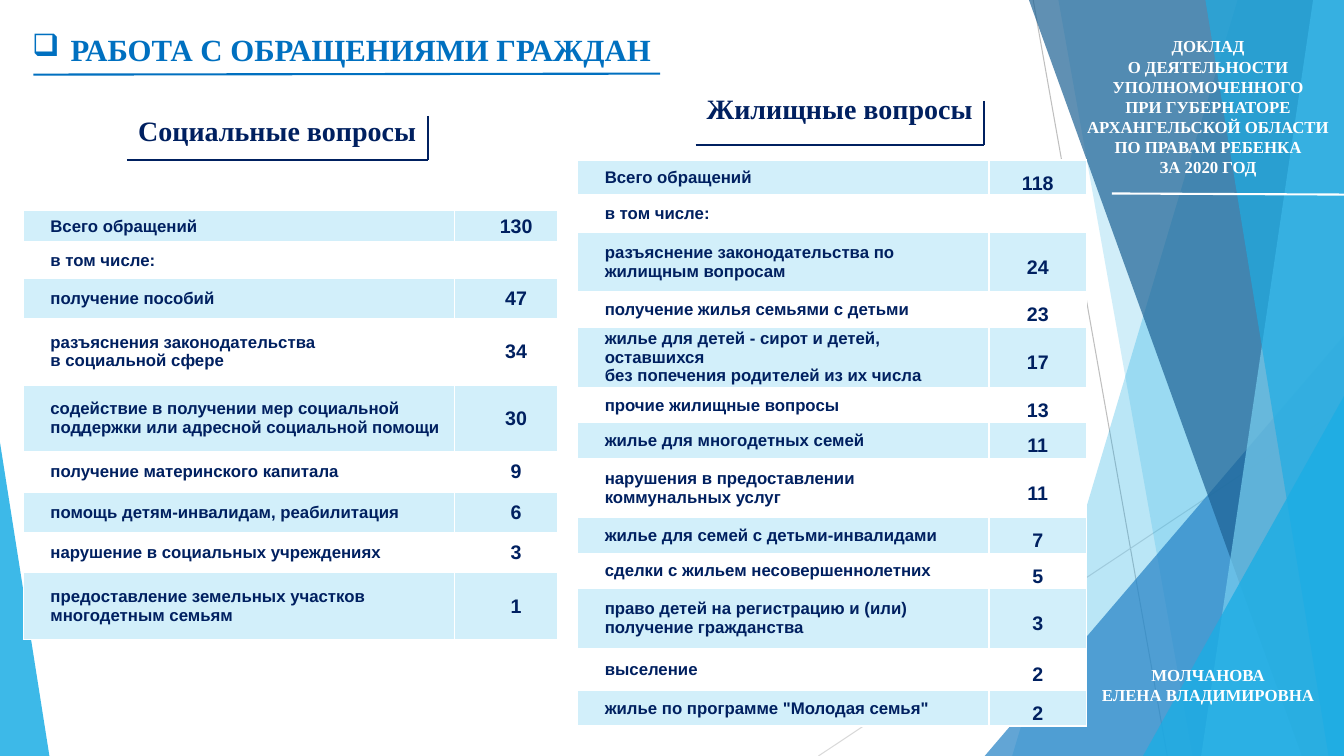
import pptx
import pptx.dml.color
import pptx.enum.shapes
import pptx.enum.text
import pptx.oxml
import pptx.oxml.ns
import pptx.util
from lxml import etree

Pt = pptx.util.Pt
ALIGN = pptx.enum.text.PP_ALIGN
ANCHOR = pptx.enum.text.MSO_ANCHOR

TITLE = "РАБОТА С ОБРАЩЕНИЯМИ ГРАЖДАН"
REPORT = ("ДОКЛАД\vО ДЕЯТЕЛЬНОСТИ УПОЛНОМОЧЕННОГО\vПРИ ГУБЕРНАТОРЕ "
          "АРХАНГЕЛЬСКОЙ ОБЛАСТИ\vПО ПРАВАМ РЕБЕНКА\vЗА 2020 ГОД")
AUTHOR = "МОЛЧАНОВА\vЕЛЕНА ВЛАДИМИРОВНА"

# Rows: label, number of appeals, row height
SOCIAL_ROWS = [
    ("Всего обращений", "130", 23.2),
    ("в том числе:", "", 25.2),
    ("получение пособий", "47", 28.7),
    ("разъяснения законодательства\vв социальной сфере", "34", 47.6),
    ("содействие в получении мер социальной поддержки или адресной социальной помощи", "30", 47.6),
    ("получение материнского капитала", "9", 28.9),
    ("помощь детям-инвалидам, реабилитация", "6", 28.9),
    ("нарушение в социальных учреждениях", "3", 28.9),
    ("предоставление земельных участков многодетным семьям", "1", 47.7),
]
HOUSING_ROWS = [
    ("Всего обращений", "118", 25.7),
    ("в том числе:", "", 25.7),
    ("разъяснение законодательства по жилищным вопросам", "24", 42.6),
    ("получение жилья семьями с детьми", "23", 25.3),
    ("жилье для детей - сирот и детей, оставшихся\vбез попечения родителей из их числа", "17", 43.2),
    ("прочие жилищные вопросы", "13", 25.3),
    ("жилье для многодетных семей", "11", 25.3),
    ("нарушения в предоставлении коммунальных услуг", "11", 42.6),
    ("жилье для семей с детьми-инвалидами", "7", 25.3),
    ("сделки с жильем несовершеннолетних", "5", 25.3),
    ("право детей на регистрацию и (или) получение гражданства", "3", 42.6),
    ("выселение", "2", 30.2),
    ('жилье по программе "Молодая семья"', "2", 25.3),
]
SECTIONS = [
    {"heading": "Социальные вопросы", "heading_box": (90.7, 77.8, 214.6, 31.7),
     "corner": (90.7, 306, 82.8, 114.5), "rows": SOCIAL_ROWS, "origin": (16.6, 150.3),
     "columns": (308.2, 73.4), "number_indent": 14.4, "number_spacing": 1},
    {"heading": "Жилищные вопросы", "heading_box": (496.8, 61.9, 205.9, 31.7),
     "corner": (496.8, 702.7, 72, 103.7), "rows": HOUSING_ROWS, "origin": (412.6, 114.3),
     "columns": (293.8, 69.8), "number_indent": 0, "number_spacing": 1.5},
]

WIDTH, HEIGHT = 960, 540
THEME = {
    "navy": "002060", "blue": "0070C0", "white": "FFFFFF", "band": "D2EFFA",
    "serif": "Times New Roman", "sans": "Arial",
    "title": 22, "heading": 20, "number": 14, "label": 12, "side": 12,
}
# Wedges: top x, bottom x. Triangles: left, top, width, height, apex.
BACKDROP = [
    ("wedge", (884.2, 722.9), "1CADE4", 30),
    ("wedge", (756, 851.8), "1CADE4", 20),
    ("triangle", (703.4, 239.8, 256.6, 300.2, 1), "2683C6", 72),
    ("wedge", (735.1, 929.5), "1D6294", 70),
    ("wedge", (938.2, 858.2), "77CEEF", 70),
    ("wedge", (861.1, 949), "1CADE4", 65),
    ("triangle", (816.5, 283, 143.5, 257, 1), "1CADE4", 80),
    ("triangle", (0, 316.1, 35.3, 223.9, 0), "1CADE4", 85),
]
HAIRLINES = [((738, 0, 833.8, 540), "BFBFBF"), ((960, 290.2, 584.6, 540), "D9D9D9")]


def rgb(value):
    return pptx.dml.color.RGBColor.from_string(value)


def add_line(slide, ends, color, width=1.5):
    line = slide.shapes.add_connector(pptx.enum.shapes.MSO_CONNECTOR.STRAIGHT, *map(Pt, ends))
    line.line.color.rgb = rgb(color)
    line.line.width = Pt(width)
    etree.SubElement(line._element.spPr, pptx.oxml.ns.qn("a:effectLst"))


def add_backdrop(slide):
    for ends, color in HAIRLINES:
        add_line(slide, ends, color, 0.75)
    for kind, geometry, color, opacity in BACKDROP:
        if kind == "wedge":
            top_x, bottom_x = geometry
            builder = slide.shapes.build_freeform(top_x, 0, scale=Pt(1))
            builder.add_line_segments([(WIDTH, 0), (WIDTH, HEIGHT), (bottom_x, HEIGHT)])
            shape = builder.convert_to_shape()
        else:
            *box, apex = geometry
            shape = slide.shapes.add_shape(
                pptx.enum.shapes.MSO_SHAPE.ISOSCELES_TRIANGLE, *map(Pt, box))
            shape.adjustments[0] = apex
        shape.shadow.inherit = False
        shape.line.fill.background()
        shape.fill.solid()
        shape.fill.fore_color.rgb = rgb(color)
        solid = shape._element.spPr.find(pptx.oxml.ns.qn("a:solidFill"))
        etree.SubElement(solid[0], pptx.oxml.ns.qn("a:alpha"), val=str(opacity * 1000))


def write(text_frame, text, face, size, color, align, spacing=1, indent=0):
    text_frame.text = text
    paragraph = text_frame.paragraphs[0]
    paragraph.alignment = align
    paragraph.line_spacing = spacing
    properties = paragraph._p.get_or_add_pPr()
    properties.set("marL", str(Pt(indent)))
    properties.set("indent", "0")
    font_format = {"name": THEME[face], "size": Pt(THEME[size]), "bold": True}
    for run in paragraph.runs:
        for name, value in font_format.items():
            setattr(run.font, name, value)
        run.font.color.rgb = rgb(THEME[color])
    return properties


def add_label(slide, box, text, size, color, wrap=True):
    shape = slide.shapes.add_textbox(*map(Pt, box))
    write(shape.text_frame, text, "serif", size, color, ALIGN.CENTER)
    shape.text_frame.word_wrap = wrap


def add_title(slide):
    title = slide.shapes.title
    title.left, title.top, title.width, title.height = map(Pt, (15.8, 5, 465.8, 47.5))
    properties = write(title.text_frame, TITLE, "serif", "title", "blue", ALIGN.LEFT, 1.5, 27.4)
    properties.set("indent", str(Pt(-27.4)))
    etree.SubElement(properties, pptx.oxml.ns.qn("a:buChar"), char="❑")
    frame_format = {"vertical_anchor": ANCHOR.TOP, "word_wrap": True,
                    "auto_size": pptx.enum.text.MSO_AUTO_SIZE.NONE}
    for name, value in frame_format.items():
        setattr(title.text_frame, name, value)


def format_cell(cell, row_index):
    cell_format = {"margin_left": Pt(5), "margin_right": Pt(5), "margin_top": 0,
                   "margin_bottom": 0, "vertical_anchor": ANCHOR.MIDDLE}
    for name, value in cell_format.items():
        setattr(cell, name, value)
    properties = cell._tc.get_or_add_tcPr()
    for side in "LRTB":
        header_edge = (row_index, side) in ((0, "B"), (1, "T"))
        properties.append(pptx.oxml.parse_xml(
            f'<a:ln{side} {pptx.oxml.ns.nsdecls("a")} w="{Pt(3 if header_edge else 1)}">'
            f'<a:solidFill><a:srgbClr val="{THEME["white"]}"/></a:solidFill></a:ln{side}>'))
    cell.fill.solid()
    cell.fill.fore_color.rgb = rgb(THEME["white" if row_index % 2 else "band"])


def add_appeals_table(slide, section):
    rows, columns = section["rows"], section["columns"]
    size = sum(columns), sum(row[2] for row in rows)
    table = slide.shapes.add_table(
        len(rows), len(columns), *map(Pt, section["origin"] + size)).table
    table.first_row = table.horz_banding = False
    for column, width in zip(table.columns, columns):
        column.width = Pt(width)
    for index, (label, number, height) in enumerate(rows):
        table.rows[index].height = Pt(height)
        label_cell, number_cell = table.rows[index].cells
        write(label_cell.text_frame, label, "sans", "label", "navy", ALIGN.LEFT, indent=14.4)
        if number:
            write(number_cell.text_frame, number, "sans", "number", "navy", ALIGN.CENTER,
                  section["number_spacing"], section["number_indent"])
        for cell in (label_cell, number_cell):
            format_cell(cell, index)


def add_section(slide, section):
    add_appeals_table(slide, section)
    add_label(slide, section["heading_box"], section["heading"], "heading", "navy", wrap=False)
    left, right, top, bottom = section["corner"]
    add_line(slide, (left, bottom, right, bottom), THEME["navy"])
    add_line(slide, (right, top, right, bottom), THEME["navy"])


def main():
    presentation = pptx.Presentation()
    presentation.slide_width, presentation.slide_height = Pt(WIDTH), Pt(HEIGHT)
    slide = presentation.slides.add_slide(presentation.slide_layouts[5])
    add_backdrop(slide)
    add_label(slide, (766.1, 22.3, 193.7, 108.7), REPORT, "side", "white")
    add_label(slide, (766.1, 471.4, 193.7, 36.7), AUTHOR, "side", "white")
    add_line(slide, (794.2, 138.2, 960, 139), THEME["white"])
    for section in SECTIONS:
        add_section(slide, section)
    add_title(slide)
    add_line(slide, (23.8, 53.3, 471.6, 52.6), THEME["blue"])
    presentation.save("out.pptx")


if __name__ == "__main__":
    main()
